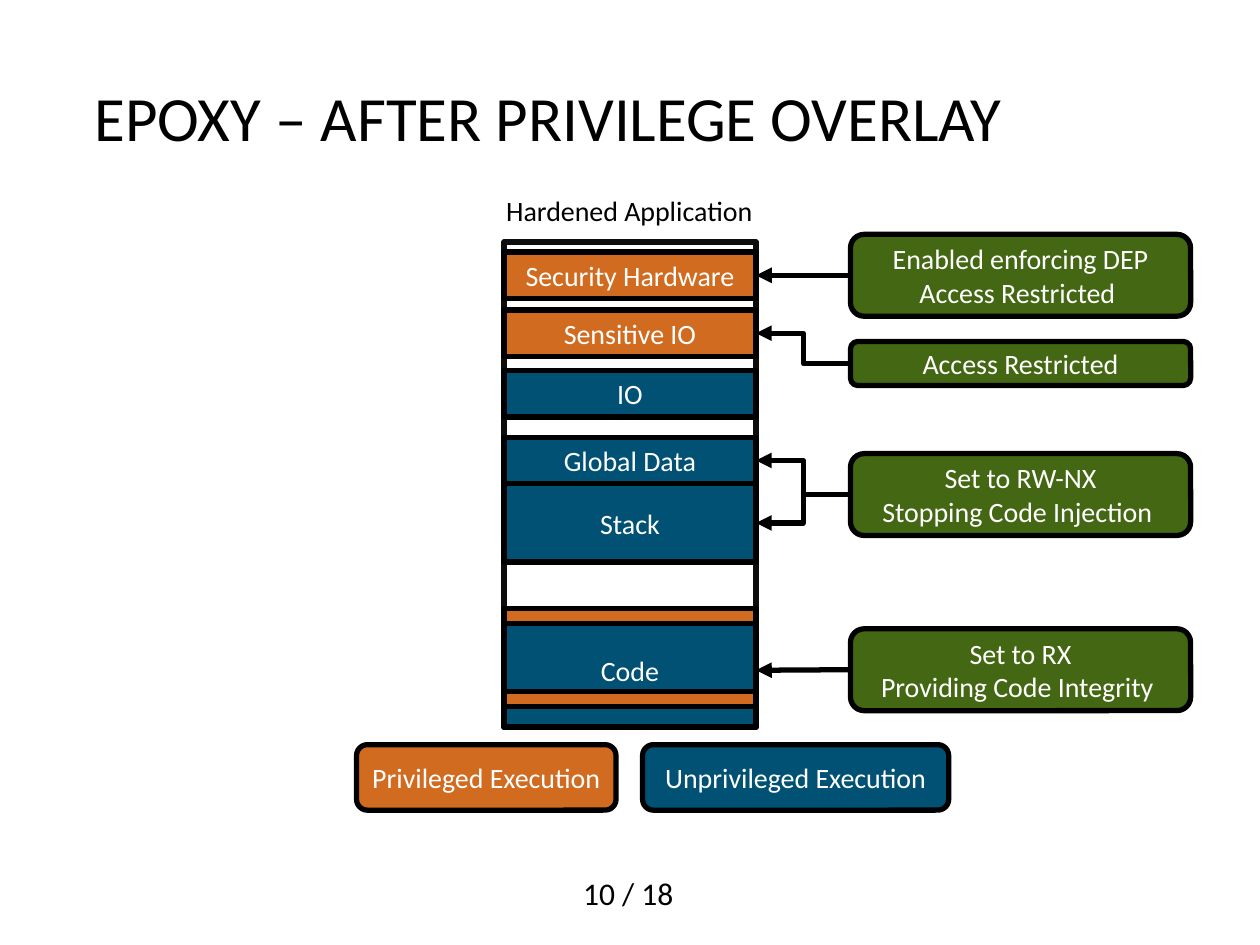
from dataclasses import dataclass
from typing import Optional

from lxml.etree import SubElement
from pptx import Presentation
from pptx.dml.color import RGBColor
from pptx.enum.shapes import MSO_CONNECTOR, MSO_SHAPE
from pptx.enum.text import MSO_ANCHOR, PP_ALIGN
from pptx.oxml.ns import qn
from pptx.util import Inches, Pt

BLACK, WHITE, FRAME = "000000", "FFFFFF", "0D0D0D"
PRIVILEGED, UNPRIVILEGED, CALLOUT = "D06B20", "005173", "436712"
MEMORY_LEFT, MEMORY_WIDTH = 4, 2
CALLOUT_LEFT, CALLOUT_WIDTH = 6.75, 2.7
ROW_HEIGHT, STRIPE_HEIGHT, CALLOUT_HEIGHT = 0.37, 0.12, 0.65
LEGEND_TOP, LEGEND_HEIGHT = 5.91, 0.52


@dataclass
class Region:
    text: str
    top: float
    height: float
    fill: Optional[str]
    line: str = BLACK


@dataclass
class Callout:
    text: str
    top: float
    height: float
    targets: list[str]
    connector: MSO_CONNECTOR


@dataclass
class LegendEntry:
    text: str
    left: float
    width: float
    fill: str


REGIONS = [
    Region("", 1.92, 3.85, None, FRAME),
    Region("Code", 4.87, 0.9, UNPRIVILEGED),
    Region("Global Data", 3.47, ROW_HEIGHT, UNPRIVILEGED),
    Region("Stack", 3.84, 0.62, UNPRIVILEGED),
    Region("IO", 2.94, ROW_HEIGHT, UNPRIVILEGED),
    Region("Security Hardware", 2, ROW_HEIGHT, PRIVILEGED),
    Region("Sensitive IO", 2.46, ROW_HEIGHT, PRIVILEGED),
    Region("", 4.83, STRIPE_HEIGHT, PRIVILEGED),
    Region("", 5.49, STRIPE_HEIGHT, PRIVILEGED),
]
CALLOUTS = [
    Callout("Enabled enforcing DEP\nAccess Restricted ", 1.86, CALLOUT_HEIGHT,
            ["Security Hardware"], MSO_CONNECTOR.STRAIGHT),
    Callout("Access Restricted", 2.71, 0.35, ["Sensitive IO"], MSO_CONNECTOR.ELBOW),
    Callout("Set to RW-NX\nStopping Code Injection ", 3.6, CALLOUT_HEIGHT,
            ["Global Data", "Stack"], MSO_CONNECTOR.ELBOW),
    Callout("Set to RX\nProviding Code Integrity ", 4.99, CALLOUT_HEIGHT,
            ["Code"], MSO_CONNECTOR.STRAIGHT),
]
LEGEND = [
    LegendEntry("Privileged Execution", 2.83, 2.06, PRIVILEGED),
    LegendEntry("Unprivileged Execution", 5.1, 2.43, UNPRIVILEGED),
]


def color(value: str) -> RGBColor:
    return RGBColor.from_string(value)


def write_text(shape, text: str, size: int, font_color: str, alignment: PP_ALIGN) -> None:
    text_frame = shape.text_frame
    text_frame.text = text
    for paragraph in text_frame.paragraphs:
        paragraph.alignment = alignment
        for run in paragraph.runs:
            run.font.name = "Calibri"
            run.font.size = Pt(size)
            run.font.color.rgb = color(font_color)


def add_box(slide, kind: MSO_SHAPE, left: float, top: float, width: float, height: float,
            fill: Optional[str], text: str, line: str = BLACK):
    shape = slide.shapes.add_shape(
        kind, Inches(left), Inches(top), Inches(width), Inches(height))
    shape.shadow.inherit = False
    if fill:
        shape.fill.solid()
        shape.fill.fore_color.rgb = color(fill)
    else:
        shape.fill.background()
    shape.line.color.rgb = color(line)
    shape.line.width = Pt(3)
    if text:
        shape.text_frame.word_wrap = True
        shape.text_frame.vertical_anchor = MSO_ANCHOR.MIDDLE
        write_text(shape, text, 16, WHITE, PP_ALIGN.CENTER)
    return shape


def add_label(slide, left: float, top: float, width: float, height: float, text: str,
              size: int, alignment: PP_ALIGN = PP_ALIGN.LEFT, wrap: bool = True):
    label = slide.shapes.add_textbox(
        Inches(left), Inches(top), Inches(width), Inches(height))
    label.text_frame.word_wrap = wrap
    write_text(label, text, size, BLACK, alignment)
    return label


def add_arrow(slide, kind: MSO_CONNECTOR, source, target) -> None:
    """Join the left side of source to the right side of target."""
    connector = slide.shapes.add_connector(
        kind, source.left, source.top + source.height // 2,
        target.left + target.width, target.top + target.height // 2)
    connector.begin_connect(source, 1)
    connector.end_connect(target, 3)
    connector.line.color.rgb = color(BLACK)
    connector.line.width = Pt(3)
    SubElement(connector.line._get_or_add_ln(), qn("a:tailEnd"), type="triangle")
    SubElement(connector._element.spPr, qn("a:effectLst"))


def main() -> None:
    presentation = Presentation()
    presentation.slide_width = Inches(10)
    presentation.slide_height = Inches(7.5)
    slide = presentation.slides.add_slide(presentation.slide_layouts[6])

    # Page number, title and heading
    add_label(slide, 4.53, 6.89, 0.97, 0.4, "10 / 18", 18, wrap=False)
    title = add_label(slide, 0.75, 0.3, 8.5, 1.25, "EPOXY – AFTER PRIVILEGE OVERLAY", 36)
    title.text_frame.margin_left = title.text_frame.margin_right = 0
    title.text_frame.vertical_anchor = MSO_ANCHOR.MIDDLE
    add_label(slide, 3.63, 1.49, 2.73, 0.37, "Hardened Application", 16, PP_ALIGN.CENTER)

    # Memory map
    region_shapes = {}
    for region in REGIONS:
        shape = add_box(slide, MSO_SHAPE.RECTANGLE, MEMORY_LEFT, region.top, MEMORY_WIDTH,
                        region.height, region.fill, region.text, region.line)
        if region.text:
            region_shapes[region.text] = shape

    # Callouts with arrows to the regions they protect
    for callout in CALLOUTS:
        shape = add_box(slide, MSO_SHAPE.ROUNDED_RECTANGLE, CALLOUT_LEFT, callout.top,
                        CALLOUT_WIDTH, callout.height, CALLOUT, callout.text)
        for target in callout.targets:
            add_arrow(slide, callout.connector, shape, region_shapes[target])

    # Legend
    for entry in LEGEND:
        add_box(slide, MSO_SHAPE.ROUNDED_RECTANGLE, entry.left, LEGEND_TOP,
                entry.width, LEGEND_HEIGHT, entry.fill, entry.text)

    presentation.save("out.pptx")


if __name__ == "__main__":
    main()
